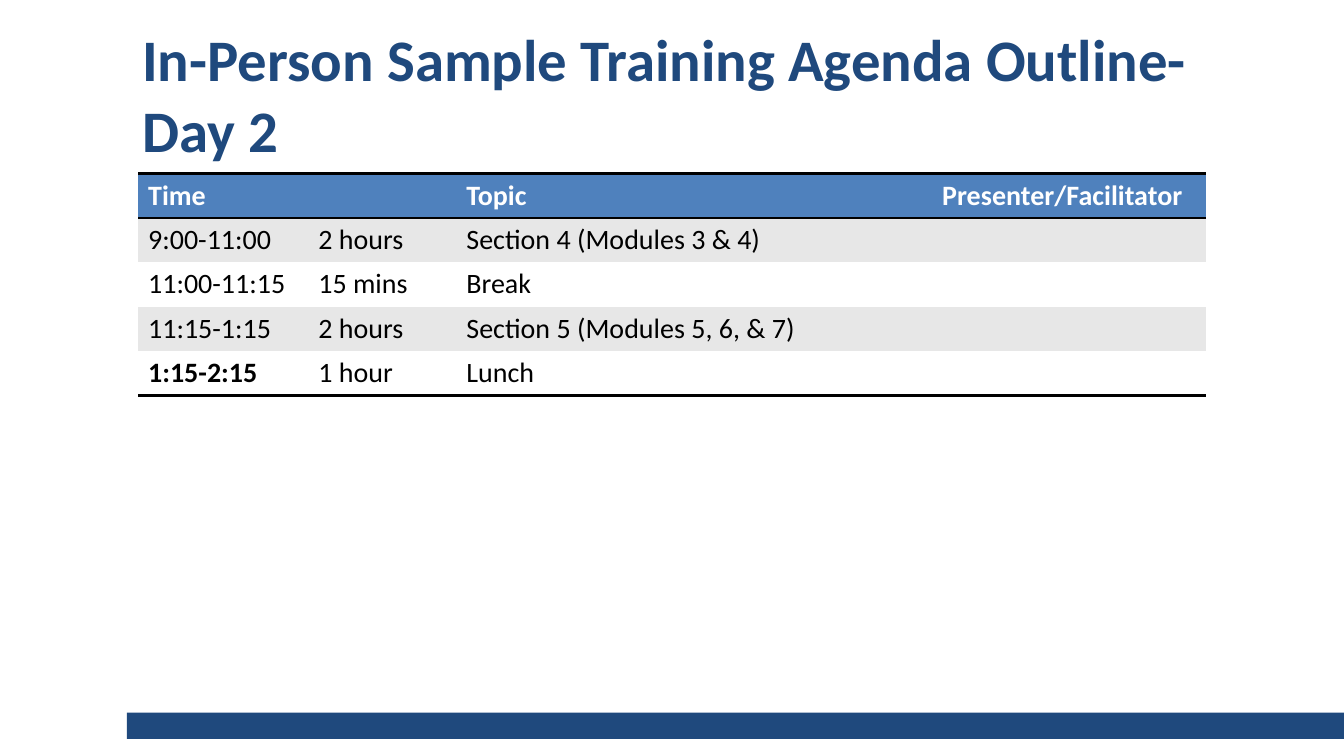
from lxml import etree
from pptx import Presentation
from pptx.dml.color import RGBColor
from pptx.enum.shapes import MSO_SHAPE
from pptx.enum.text import MSO_ANCHOR, PP_ALIGN
from pptx.oxml.ns import qn
from pptx.util import Cm, Pt

RECT = MSO_SHAPE.RECTANGLE
MIDDLE = MSO_ANCHOR.MIDDLE
LEFT = PP_ALIGN.LEFT

NAVY, BLUE, GREY = "1F497D", "4F81BD", "E7E7E7"
WHITE, BLACK = "FFFFFF", "000000"

AGENDA = [
    ("Time", "", "Topic", "Presenter/Facilitator"),
    ("9:00-11:00", "2 hours", "Section 4 (Modules 3 & 4)", ""),
    ("11:00-11:15", "15 mins", "Break", ""),
    ("11:15-1:15", "2 hours", "Section 5 (Modules 5, 6, & 7)", ""),
    ("1:15-2:15", "1 hour", "Lunch", ""),
]
WIDTHS = (4.29, 3.73, 11.99, 6.91)
ROW = 1.1


def color(code):
    return RGBColor.from_string(code)


class Page:
    """Holds the style and the current slide."""

    font = "Calibri"

    def __init__(self, deck):
        self.slide = deck.slides.add_slide(deck.slide_layouts[5])
        self.shapes = self.slide.shapes

    def style(self, para, ink, **format):
        para.alignment = LEFT
        para.font.color.rgb = color(ink)
        for name, value in {"name": self.font, **format}.items():
            setattr(para.font, name, value)

    def title(self, text, *box):
        shape = self.shapes.title
        for name, value in zip(("left", "top", "width", "height"), box):
            setattr(shape, name, Cm(value))
        frame = shape.text_frame
        frame.text = text
        frame.word_wrap = True
        frame.vertical_anchor = MIDDLE
        self.style(frame.paragraphs[0], NAVY, size=Pt(42), bold=True)

    def bar(self, *box):
        shape = self.shapes.add_shape(RECT, *map(Cm, box))
        shape.shadow.inherit = False
        shape.fill.solid()
        shape.fill.fore_color.rgb = color(NAVY)
        shape.line.fill.background()

    def edges(self, cell, drawn):
        props = cell._tc.get_or_add_tcPr()
        for index, side in enumerate("LRTB"):
            line = etree.Element(qn(f"a:ln{side}"), w=str(Pt(2)))
            if side in drawn:
                fill = etree.SubElement(line, qn("a:solidFill"))
                etree.SubElement(fill, qn("a:srgbClr"), val=BLACK)
            else:
                etree.SubElement(line, qn("a:noFill"))
            props.insert(index, line)

    def table(self, rows, widths, left, top):
        box = map(Cm, (left, top, sum(widths), ROW * len(rows)))
        grid = self.shapes.add_table(len(rows), len(widths), *box).table
        for column, width in zip(grid.columns, widths):
            column.width = Cm(width)
        last = len(rows) - 1
        for r, row in enumerate(rows):
            back = BLUE if r == 0 else GREY if r % 2 else WHITE
            drawn = ("T" if r < 2 else "") + ("B" if r in (0, last) else "")
            for c, text in enumerate(row):
                cell = grid.cell(r, c)
                cell.text = text
                cell.fill.solid()
                cell.fill.fore_color.rgb = color(back)
                bold = r == 0 or (r == last and c == 0)
                ink = BLACK if r else WHITE
                para = cell.text_frame.paragraphs[0]
                self.style(para, ink, size=Pt(20), bold=bold)
                self.edges(cell, drawn)


def main():
    deck = Presentation()
    deck.slide_width, deck.slide_height = Cm(33.87), Cm(19.05)
    page = Page(deck)
    page.bar(3.2, 17.96, 30.67, 0.66)
    page.title("In-Person Sample Training Agenda Outline- Day 2",
               3.33, 0.76, 28.83, 3.18)
    page.table(AGENDA, WIDTHS, 3.48, 4.37)
    deck.save("out.pptx")


if __name__ == "__main__":
    main()
